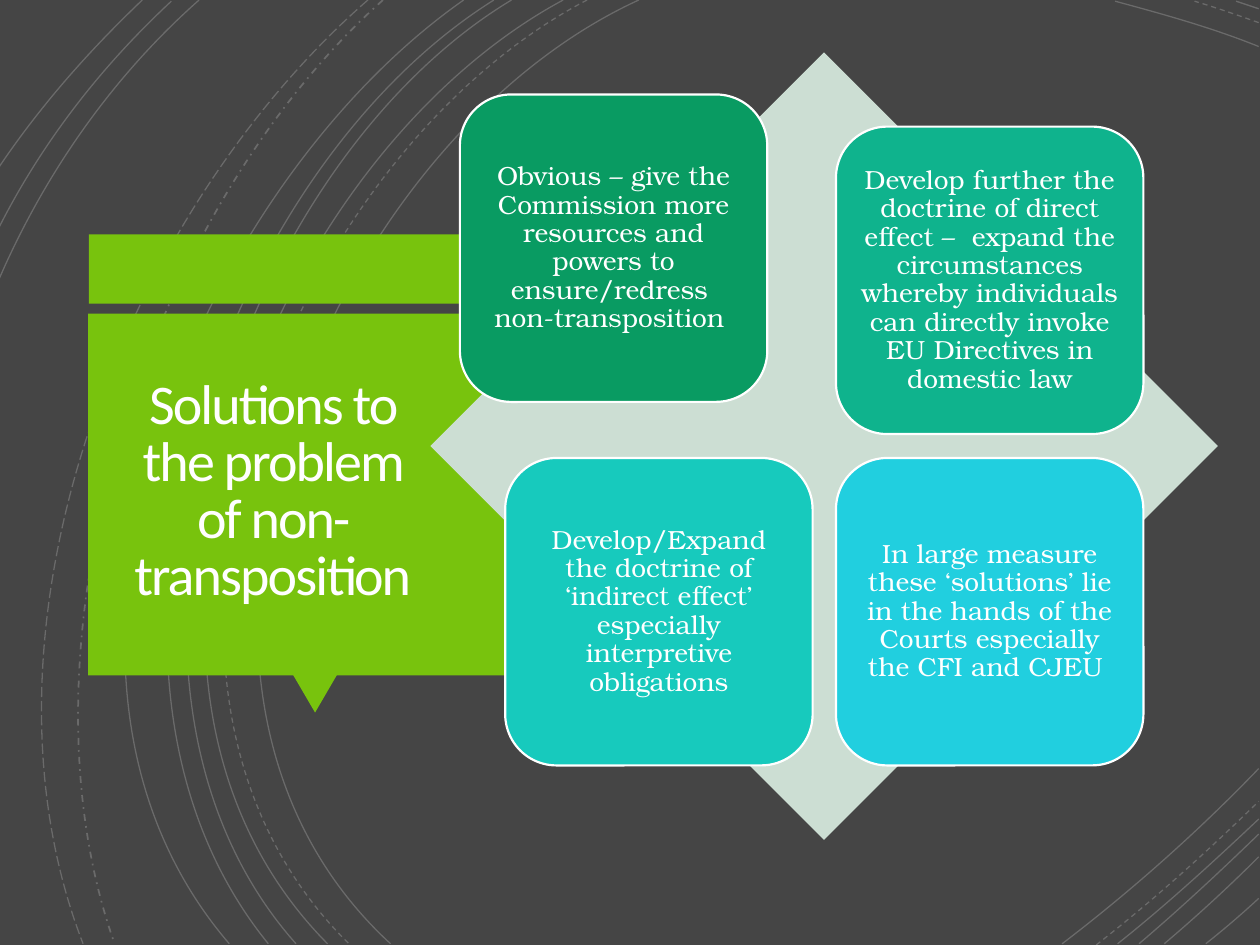
from pptx import Presentation
from pptx.dml.color import RGBColor
from pptx.enum.dml import MSO_LINE
from pptx.enum.shapes import MSO_SHAPE
from pptx.enum.text import MSO_ANCHOR, PP_ALIGN
from pptx.oxml.ns import qn
from pptx.util import Inches, Pt
from lxml.etree import SubElement

CHARCOAL = RGBColor(0x45, 0x45, 0x45)
WHITE = RGBColor(0xFF, 0xFF, 0xFF)
TITLE_WHITE = RGBColor(0xFF, 0xFE, 0xFF)
LIME = RGBColor(0x78, 0xC3, 0x0D)
PALE_GREEN = RGBColor(0xCC, 0xDE, 0xD3)
GREEN = RGBColor(0x09, 0x9B, 0x62)
JADE = RGBColor(0x0F, 0xB3, 0x8D)
TEAL = RGBColor(0x17, 0xCA, 0xBD)
CYAN = RGBColor(0x21, 0xCF, 0xDF)

deck = Presentation()
deck.slide_width, deck.slide_height = Inches(10), Inches(7.5)
COLUMN, ROW = deck.slide_width // 100, deck.slide_height // 75
slide = deck.slides.add_slide(deck.slide_layouts[5])
slide.background.fill.solid()
slide.background.fill.fore_color.rgb = CHARCOAL


def add_block(preset, left, top, width, height, color):
    block = slide.shapes.add_shape(
        preset, int(left * COLUMN), int(top * ROW), int(width * COLUMN), int(height * ROW))
    block.shadow.inherit = False
    block.fill.solid()
    block.fill.fore_color.rgb = color
    block.line.fill.background()
    return block


def format_text(frame, inset, spacing, font_name, size, color):
    frame.word_wrap = True
    frame.vertical_anchor = MSO_ANCHOR.MIDDLE
    frame.margin_left = frame.margin_right = Inches(inset)
    frame.margin_top = frame.margin_bottom = Inches(inset)
    paragraph = frame.paragraphs[0]
    paragraph.alignment = PP_ALIGN.CENTER
    paragraph.line_spacing = spacing
    font = paragraph.runs[0].font
    font.name, font.size, font.color.rgb = font_name, Pt(size), color


arcs = [
    (MSO_LINE.SOLID, 0.75, [
        ((50.7, 0), (25.6, 11.5), (8.3, 54), (31, 74.9)),
        ((99.9, 3.7), (96.2, 2.2), (92.2, 1.1), (88.5, 0.1)),
        ((84.3, 74.9), (89.8, 70.7), (95.1, 66), (99.9, 61)),
        ((44.7, 0), (21.1, 12.7), (5, 53.7), (26, 74.9)),
        ((99.9, 0.7), (99.3, 0.5), (98.7, 0.3), (98.1, 0.1)),
        ((88.7, 74.9), (92.6, 71.8), (96.3, 68.4), (99.9, 65)),
        ((40.6, 0), (18.5, 13.3), (5, 54.1), (23.5, 74.9)),
        ((90.4, 74.9), (93.7, 72.1), (96.8, 69.2), (99.9, 66.2)),
        ((39.2, 0), (17.2, 13.8), (3.8, 53.4), (21.3, 74.9)),
        ((92.4, 74.9), (95, 72.7), (97.5, 70.4), (99.9, 68)),
        ((36.8, 0), (15.8, 14.7), (-0.7, 52.9), (18.2, 74.9)),
        ((95.7, 74.9), (97.1, 73.8), (98.5, 72.6), (99.9, 71.3)),
        ((15.8, 0), (8.8, 6.2), (3.5, 13.9), (-0.1, 22.2)),
        ((13.6, 0.1), (7.9, 5.4), (3.3, 11.4), (-0.1, 18.1)),
        ((11.3, 0), (7.1, 4), (3.2, 8.4), (-0.1, 13.3)),
    ]),
    (MSO_LINE.DASH, 0.75, [
        ((46.6, 0), (22.6, 12.5), (6.3, 53.8), (27.7, 74.9)),
        ((99.9, 1.8), (98.2, 1.2), (96.5, 0.6), (94.8, 0.1)),
        ((87, 75), (91.5, 71.5), (95.8, 67.6), (99.9, 63.6)),
    ]),
    (MSO_LINE.DASH_DOT, 1, [((30.4, 0), (11.7, 16.6), (0.6, 50.9), (9.1, 74.9))]),
    (MSO_LINE.LONG_DASH, 0.75, [((29.2, 0), (9.8, 16.9), (-3.1, 49.9), (6.6, 74.9))]),
]
for dash, weight, curves in arcs:
    for curve in curves:
        start, *controls = [(int(x * COLUMN), int(y * ROW)) for x, y in curve]
        builder = slide.shapes.build_freeform(*start)
        builder.add_line_segments(controls, close=False)
        arc = builder.convert_to_shape()
        outline = arc._element.find(".//" + qn("a:path"))
        segments = outline.findall(qn("a:lnTo"))
        bezier = SubElement(outline, qn("a:cubicBezTo"))
        for segment in segments:
            bezier.append(segment[0])
            outline.remove(segment)
        arc.shadow.inherit = False
        arc.fill.background()
        arc.line.color.rgb = WHITE
        arc.line.width = Pt(weight)
        arc.line.dash_style = dash
        tint = arc.line._ln.find(".//" + qn("a:srgbClr"))
        SubElement(tint, qn("a:alpha"), val="20000")

add_block(MSO_SHAPE.RECTANGLE, 7.05, 18.6, 35.8, 5.5, LIME)
pointer = add_block(MSO_SHAPE.ISOSCELES_TRIANGLE, 23.25, 53.55, 3.5, 3, LIME)
pointer.rotation = 180
add_block(MSO_SHAPE.RECTANGLE, 7, 24.9, 35.9, 28.7, LIME)

title = slide.shapes.title
slide.shapes._spTree.append(title._element)
title.left, title.top = int(7.3 * COLUMN), int(25.65 * ROW)
title.width, title.height = int(28.7 * COLUMN), int(26.9 * ROW)
title.text_frame.text = "Solutions to the problem of non-transposition"
format_text(title.text_frame, 0.25, 0.85, "Calibri", 32, TITLE_WHITE)
title.text_frame.paragraphs[0].runs[0].font._element.set("spc", "-110")

add_block(MSO_SHAPE.DIAMOND, 34.15, 4.15, 62.5, 62.5, PALE_GREEN)

CARD = 24.4
solutions = [
    (36.5, 7.5, GREEN, "Obvious – give the Commission more resources and powers to "
     "ensure/redress  non-transposition "),
    (66.35, 10.05, JADE, "Develop further the doctrine of direct effect –  expand the "
     "circumstances whereby individuals can directly invoke EU Directives in domestic law"),
    (40.1, 36.35, TEAL, "Develop/Expand the doctrine of ‘indirect effect’ especially "
     "interpretive obligations"),
    (66.35, 36.35, CYAN, "In large measure these ‘solutions’ lie in the hands of the Courts "
     "especially the CFI and CJEU "),
]
for left, top, color, wording in solutions:
    card = add_block(MSO_SHAPE.ROUNDED_RECTANGLE, left, top, CARD, CARD, color)
    card.line.color.rgb = WHITE
    card.line.width = Pt(1.25)
    card.text_frame.text = wording
    format_text(card.text_frame, 0.06, 0.9, "TeX Gyre Bonum", 15, WHITE)

deck.save("out.pptx")
